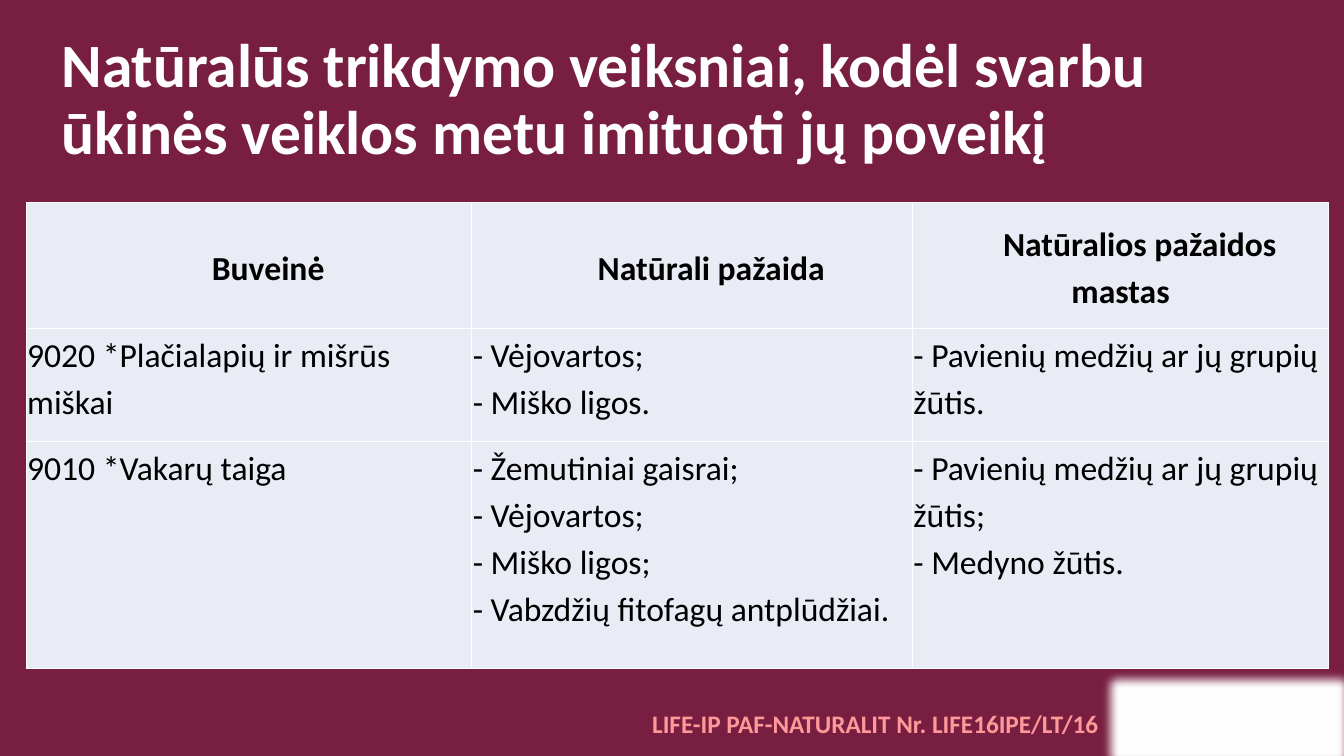
"""Build the slide on natural disturbance factors in forest habitats."""
from lxml.etree import SubElement
from pptx import Presentation
from pptx.dml.color import RGBColor
from pptx.enum.shapes import MSO_SHAPE
from pptx.enum.text import MSO_ANCHOR, PP_ALIGN
from pptx.oxml.ns import qn
from pptx.util import Inches, Pt

TITLE = "Natūralūs trikdymo veiksniai, kodėl svarbu ūkinės veiklos metu imituoti jų poveikį"
FOOTER = "LIFE-IP PAF-NATURALIT Nr. LIFE16IPE/LT/16"
ROWS = [
    [["Buveinė"], ["Natūrali pažaida"], ["Natūralios pažaidos mastas"]],
    [["9020 *Plačialapių ir mišrūs miškai"],
     ["- Vėjovartos;", "- Miško ligos."],
     ["- Pavienių medžių ar jų grupių žūtis."]],
    [["9010 *Vakarų taiga"],
     ["- Žemutiniai gaisrai;", "- Vėjovartos;", "- Miško ligos;",
      "- Vabzdžių fitofagų antplūdžiai."],
     ["- Pavienių medžių ar jų grupių žūtis;", "- Medyno žūtis."]],
]
WIDTHS = [4.42, 4.37, 4.13]
HEIGHTS = [1.25, 1.12, 2.25]
WINE, WHITE, PINK, BLACK, PALE = "781E40", "FFFFFF", "FF9999", "000000", "E9EBF5"


def color(code):
    return RGBColor.from_string(code)


def write(frame, lines, size=24, ink=BLACK, bold=False, align=PP_ALIGN.LEFT,
          space=1.0, indent=0, anchor=MSO_ANCHOR.TOP):
    frame.vertical_anchor = anchor
    for i, line in enumerate(lines):
        para = frame.add_paragraph() if i else frame.paragraphs[0]
        para.alignment, para.line_spacing = align, space
        if indent:
            props = para._p.get_or_add_pPr()
            props.set("marL", "0")
            props.set("indent", str(Inches(indent)))
        run = para.add_run()
        run.text = line
        font = run.font
        font.name, font.size, font.bold = "Calibri", Pt(size), bold
        font.color.rgb = color(ink)


def border(cell):
    props = cell._tc.get_or_add_tcPr()
    for i, side in enumerate(("lnL", "lnR", "lnT", "lnB")):
        line = props.makeelement(qn("a:" + side), {"w": str(Pt(1))})
        fill = SubElement(line, qn("a:solidFill"))
        SubElement(fill, qn("a:srgbClr"), val=WHITE)
        props.insert(i, line)


def panel(slide):
    box = slide.shapes.add_shape(MSO_SHAPE.RECTANGLE, Inches(10.87), Inches(6.6),
                                 Inches(2.63), Inches(1.11))
    box.shadow.inherit = False
    box.fill.solid()
    box.fill.fore_color.rgb = box.line.color.rgb = color(WHITE)
    box.line.width = Pt(1)
    effects = box._element.spPr.find(qn("a:effectLst"))
    SubElement(effects, qn("a:softEdge"), rad="112500")


def footer(slide):
    box = slide.shapes.add_textbox(Inches(6.37), Inches(6.98), Inches(4.67), Inches(0.4))
    box.text_frame.word_wrap = False
    write(box.text_frame, [FOOTER], size=18, ink=PINK, bold=True)


def heading(slide):
    title = slide.shapes.title
    title.left, title.top = Inches(0.51), Inches(0.28)
    title.width, title.height = Inches(11.5), Inches(1.45)
    write(title.text_frame, [TITLE], size=44, ink=WHITE, bold=True, space=0.9,
          anchor=MSO_ANCHOR.MIDDLE)


def grid(slide):
    table = slide.shapes.add_table(len(ROWS), len(WIDTHS), Inches(0.26), Inches(2.01),
                                   Inches(sum(WIDTHS)), Inches(sum(HEIGHTS))).table
    table.first_row = table.horz_banding = False
    for col, width in zip(table.columns, WIDTHS):
        col.width = Inches(width)
    head = dict(bold=True, align=PP_ALIGN.CENTER, indent=0.38, anchor=MSO_ANCHOR.MIDDLE)
    for r, row in enumerate(ROWS):
        table.rows[r].height = Inches(HEIGHTS[r])
        for c, lines in enumerate(row):
            cell = table.cell(r, c)
            cell.margin_left = cell.margin_right = Inches(0.01)
            cell.margin_top = cell.margin_bottom = Inches(0.01)
            cell.fill.solid()
            cell.fill.fore_color.rgb = color(PALE)
            style = {} if r else head
            write(cell.text_frame, lines, space=1.15, **style)
            cell.vertical_anchor = style.get("anchor", MSO_ANCHOR.TOP)
            border(cell)


def main():
    deck = Presentation()
    deck.slide_width, deck.slide_height = Inches(13.33), Inches(7.5)
    slide = deck.slides.add_slide(deck.slide_layouts[5])
    slide.background.fill.solid()
    slide.background.fill.fore_color.rgb = color(WINE)
    panel(slide)
    footer(slide)
    heading(slide)
    grid(slide)
    deck.save("out.pptx")


if __name__ == "__main__":
    main()
